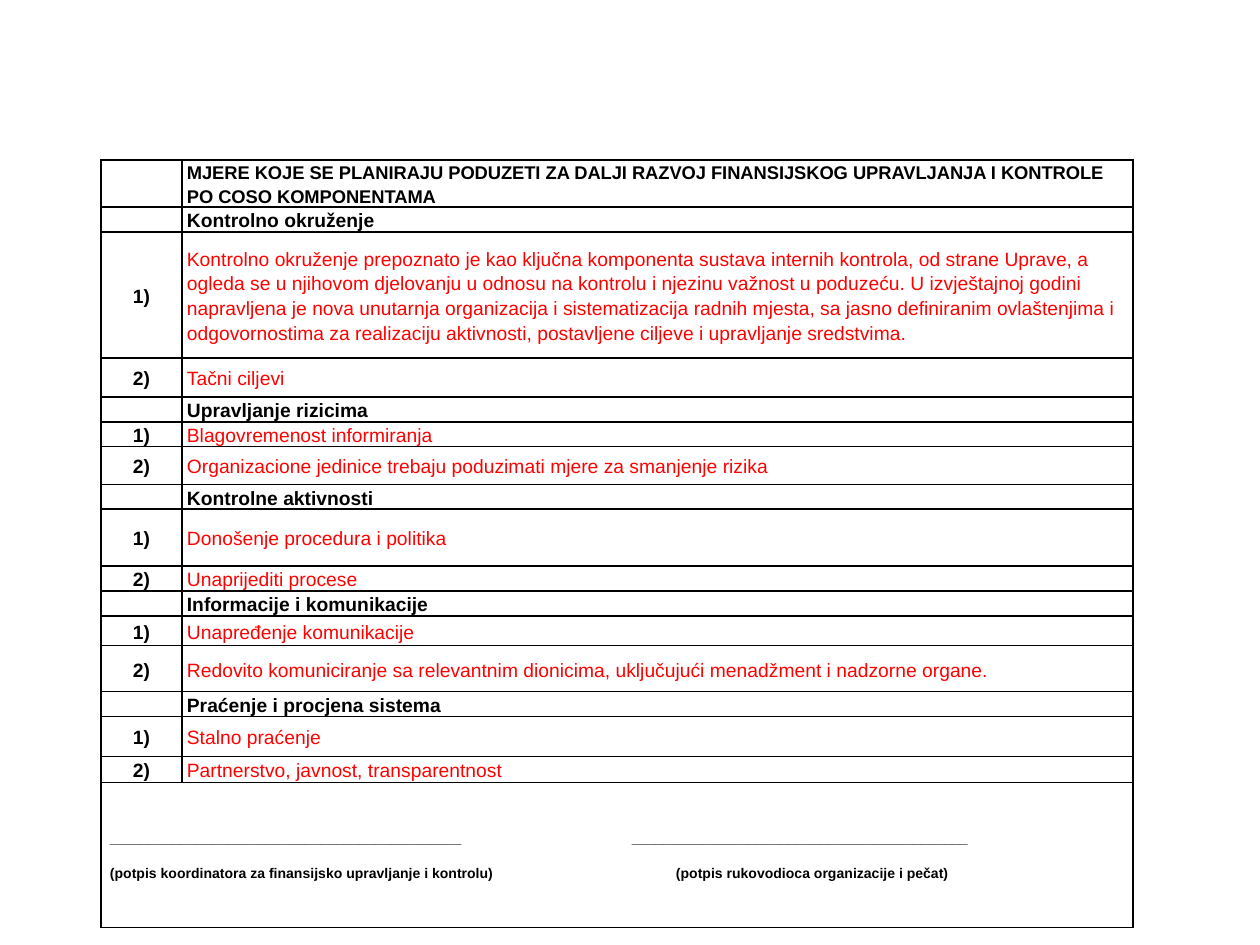
from lxml.etree import SubElement as Sub
from pptx import Presentation as Deck
from pptx.enum.text import MSO_ANCHOR as Anchor, PP_ALIGN as Align
from pptx.oxml.ns import qn
from pptx.util import Pt
from pptx.dml.color import RGBColor as Color

INK = {"black": "000000", "red": "FF0000"}


def px(n):
    return round(n * 914400 / 126)


def write(cell, text, size=11, bold=True, ink="black", align=Align.LEFT, anchor=Anchor.MIDDLE, tabs=()):
    cell.vertical_anchor = anchor
    frame = cell.text_frame
    for i, line in enumerate(text.split("\n")):
        para = frame.paragraphs[0] if i == 0 else frame.add_paragraph()
        para.alignment = align
        para.line_spacing = 1.15
        para.space_after = Pt(10)
        if tabs:
            stops = Sub(para._p.get_or_add_pPr(), qn("a:tabLst"))
            Sub(stops, qn("a:tab"), pos=str(px(tabs[i])), algn="l")
        if not line:
            Sub(para._p, qn("a:endParaRPr"), sz=str(size * 100))
            continue
        run = para.add_run()
        run.text = line
        font = run.font
        font.name = "Arial"
        font.size = Pt(size)
        font.bold = bold
        font.color.rgb = Color.from_string(INK[ink])


rows = [
    (47, "", "MJERE KOJE SE PLANIRAJU PODUZETI ZA DALJI RAZVOJ FINANSIJSKOG UPRAVLJANJA I KONTROLE PO COSO KOMPONENTAMA"),
    (25, "", "Kontrolno okruženje"),
    (126, "1)", "Kontrolno okruženje prepoznato je kao ključna komponenta sustava internih kontrola, od strane Uprave, a "
     "ogleda se u njihovom djelovanju u odnosu na kontrolu i njezinu važnost u poduzeću. U izvještajnoj godini "
     "napravljena je nova unutarnja organizacija i sistematizacija radnih mjesta, sa jasno definiranim ovlaštenjima i "
     "odgovornostima za realizaciju aktivnosti, postavljene ciljeve i upravljanje sredstvima."),
    (39, "2)", "Tačni ciljevi"),
    (25, "", "Upravljanje rizicima"),
    (24, "1)", "Blagovremenost informiranja"),
    (38, "2)", "Organizacione jedinice trebaju poduzimati mjere za smanjenje rizika"),
    (24, "", "Kontrolne aktivnosti"),
    (57, "1)", "Donošenje procedura i politika"),
    (25, "2)", "Unaprijediti procese"),
    (24, "", "Informacije i komunikacije"),
    (30, "1)", "Unapređenje komunikacije"),
    (46, "2)", "Redovito komuniciranje sa relevantnim dionicima, uključujući menadžment i nadzorne organe."),
    (24, "", "Praćenje i procjena sistema"),
    (40, "1)", "Stalno praćenje"),
    (26, "2)", "Partnerstvo, javnost, transparentnost"),
]
signs = "\n".join([
    "_" * 45 + "\t" + "_" * 43,
    "(potpis koordinatora za finansijsko upravljanje i kontrolu)\t(potpis rukovodioca organizacije i pečat)",
])
foot = 145
high = sum(row[0] for row in rows) + foot

deck = Deck()
deck.slide_width, deck.slide_height = px(1260), px(945)
slide = deck.slides.add_slide(deck.slide_layouts[6])
grid = slide.shapes.add_table(len(rows) + 1, 2, px(101), px(160), px(1032), px(high)).table
grid.first_row = grid.horz_banding = False
for col, wide in zip(grid.columns, (81, 951)):
    col.width = px(wide)
for row, tall in zip(grid.rows, [row[0] for row in rows] + [foot]):
    row.height = px(tall)

for cell in grid.iter_cells():
    cell.margin_left = cell.margin_right = px(5)
    cell.margin_top = cell.margin_bottom = 0
    props = cell._tc.get_or_add_tcPr()
    for side in "LRTB":
        edge = Sub(props, qn("a:ln" + side), w=str(Pt(1)))
        Sub(Sub(edge, qn("a:solidFill")), qn("a:srgbClr"), val=INK["black"])
    cell.fill.background()

for i, (tall, mark, text) in enumerate(rows):
    write(grid.cell(i, 0), mark, align=Align.CENTER)
    write(grid.cell(i, 1), text, size=11 if i else 10.5, bold=not mark,
          ink="red" if mark else "black", anchor=Anchor.BOTTOM if i < 2 else Anchor.MIDDLE)

last = grid.cell(len(rows), 0)
last.merge(grid.cell(len(rows), 1))
last.margin_left = px(9)
write(last, signs, size=8, tabs=(522, 566))

deck.save("out.pptx")
